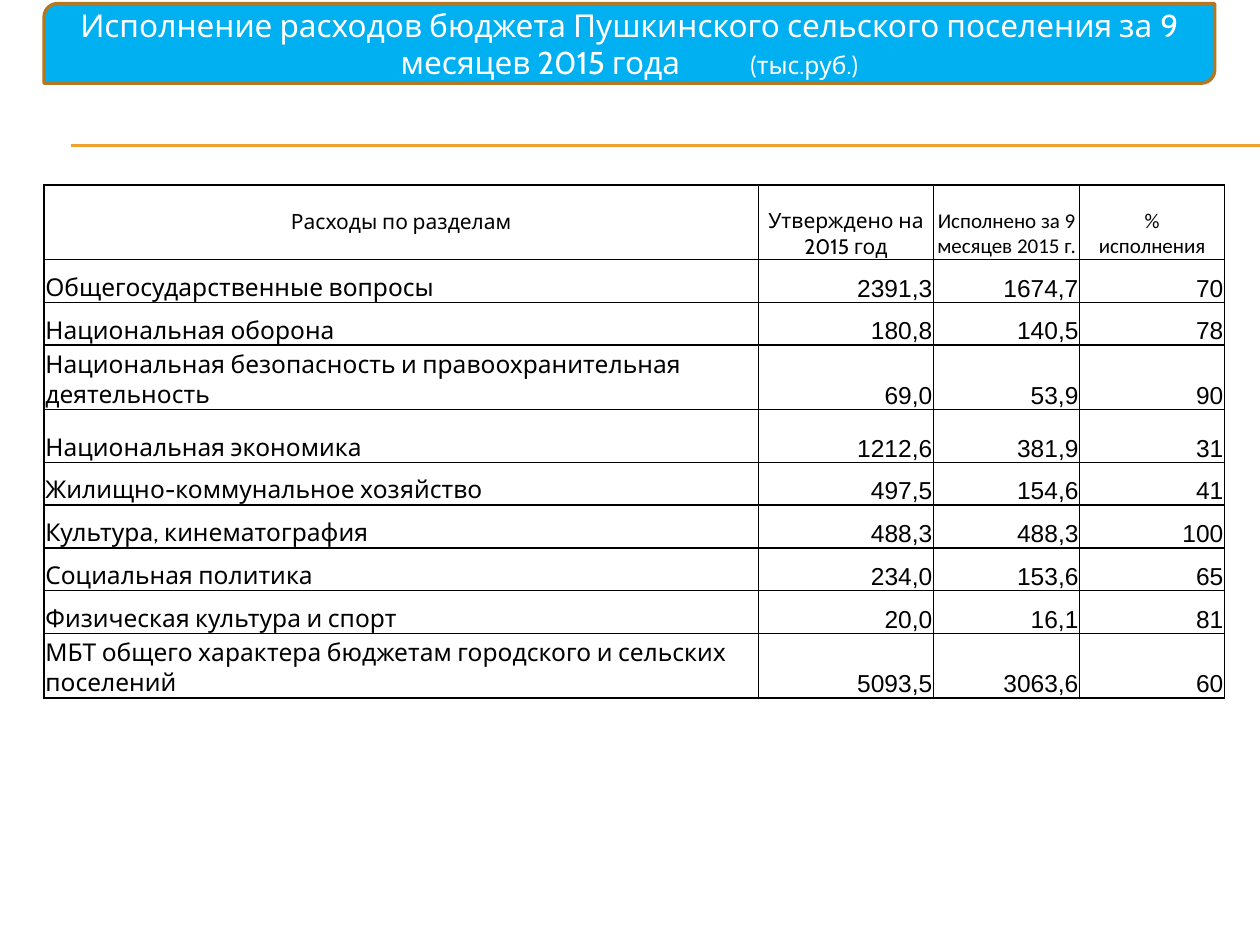
from lxml.etree import SubElement
from pptx import Presentation
from pptx.dml.color import RGBColor
from pptx.enum.shapes import MSO_CONNECTOR, MSO_SHAPE
from pptx.enum.text import MSO_ANCHOR, PP_ALIGN
from pptx.oxml.ns import qn
from pptx.util import Inches, Pt

COLORS = {
    "banner": "00B0F0",
    "banner_line": "B27822",
    "rule": "F0A22E",
    "white": "FFFFFF",
    "black": "000000",
}
COL_WIDTHS = [5.67, 1.39, 1.16, 1.15]
ROW_HEIGHTS = [0.59, 0.34, 0.34, 0.51, 0.42, 0.34, 0.34, 0.34, 0.34, 0.51]
HEADERS = [
    "Расходы по разделам",
    "Утверждено на 2015 год",
    "Исполнено за 9 месяцев 2015 г.",
    "%\nисполнения",
]
HEADER_FONTS = ["Cabin", "Cabin", "Calibri", "Calibri"]
EXPENSES = [
    ("Общегосударственные вопросы", "2391,3", "1674,7", "70"),
    ("Национальная оборона", "180,8", "140,5", "78"),
    ("Национальная безопасность и правоохранительная деятельность", "69,0", "53,9", "90"),
    ("Национальная экономика", "1212,6", "381,9", "31"),
    ("Жилищно-коммунальное хозяйство", "497,5", "154,6", "41"),
    ("Культура, кинематография", "488,3", "488,3", "100"),
    ("Социальная политика", "234,0", "153,6", "65"),
    ("Физическая культура и спорт", "20,0", "16,1", "81"),
    ("МБТ общего характера бюджетам городского и сельских поселений", "5093,5", "3063,6", "60"),
]


def rgb(name):
    return RGBColor.from_string(COLORS[name])


def style_font(font, name, size, color):
    font.name = name
    font.size = Pt(size)
    font.color.rgb = rgb(color)


def add_rule(slide, y):
    line = slide.shapes.add_connector(
        MSO_CONNECTOR.STRAIGHT, Inches(0.56), Inches(y), Inches(10), Inches(y))
    line.line.color.rgb = rgb("rule")
    line.line.width = Pt(0.75)
    SubElement(line._element.spPr, qn("a:effectLst"))


def add_banner(slide):
    sp = slide.shapes.add_shape(
        MSO_SHAPE.ROUND_2_DIAG_RECTANGLE,
        Inches(0.35), Inches(0.03), Inches(9.29), Inches(0.63))
    sp.shadow.inherit = False
    sp.fill.solid()
    sp.fill.fore_color.rgb = rgb("banner")
    sp.line.color.rgb = rgb("banner_line")
    sp.line.width = Pt(2)
    tf = sp.text_frame
    tf.word_wrap = True
    tf.vertical_anchor = MSO_ANCHOR.MIDDLE
    p = tf.paragraphs[0]
    p.alignment = PP_ALIGN.CENTER
    title = "Исполнение расходов бюджета Пушкинского сельского поселения за 9 месяцев 2015 года"
    for text, size in ((title, 18), (" ", 18), ("(тыс.руб.)", 14)):
        r = p.add_run()
        r.text = text
        style_font(r.font, "Cabin", size, "white")
    # One widened space separates the unit from the title
    p.runs[1].font._element.set("spc", "3600")


def set_borders(cell):
    tcPr = cell._tc.get_or_add_tcPr()
    for i, side in enumerate(("a:lnL", "a:lnR", "a:lnT", "a:lnB")):
        ln = tcPr.makeelement(qn(side), {"w": str(Pt(1))})
        fill = SubElement(ln, qn("a:solidFill"))
        SubElement(fill, qn("a:srgbClr"), val=COLORS["black"])
        tcPr.insert(i, ln)


def fill_cell(cell, text, font, size, align):
    cell.fill.background()
    set_borders(cell)
    cell.vertical_anchor = MSO_ANCHOR.BOTTOM
    cell.margin_left = cell.margin_right = cell.margin_top = Inches(0.01)
    cell.margin_bottom = 0
    cell.text_frame.text = text
    for p in cell.text_frame.paragraphs:
        p.alignment = align
        for r in p.runs:
            style_font(r.font, font, size, "black")


def add_expense_table(slide):
    table = slide.shapes.add_table(
        len(ROW_HEIGHTS), len(COL_WIDTHS), Inches(0.35), Inches(1.47),
        Inches(sum(COL_WIDTHS)), Inches(sum(ROW_HEIGHTS))).table
    for column, width in zip(table.columns, COL_WIDTHS):
        column.width = Inches(width)
    for row, height in zip(table.rows, ROW_HEIGHTS):
        row.height = Inches(height)
    for col, (text, font) in enumerate(zip(HEADERS, HEADER_FONTS)):
        fill_cell(table.cell(0, col), text, font, 12, PP_ALIGN.CENTER)
    # Lifts the one-line header level with the first line of the others
    table.cell(0, 0).margin_bottom = Inches(0.2)
    for row, values in enumerate(EXPENSES, start=1):
        for col, text in enumerate(values):
            font, align = ("Arial", PP_ALIGN.RIGHT) if col else ("Cabin", PP_ALIGN.LEFT)
            fill_cell(table.cell(row, col), text, font, 14, align)


def main():
    prs = Presentation()
    prs.slide_width, prs.slide_height = Inches(10), Inches(7.5)
    slide = prs.slides.add_slide(prs.slide_layouts[6])
    for y in (1.15, 1.16):
        add_rule(slide, y)
    add_banner(slide)
    add_expense_table(slide)
    prs.save("out.pptx")


if __name__ == "__main__":
    main()
